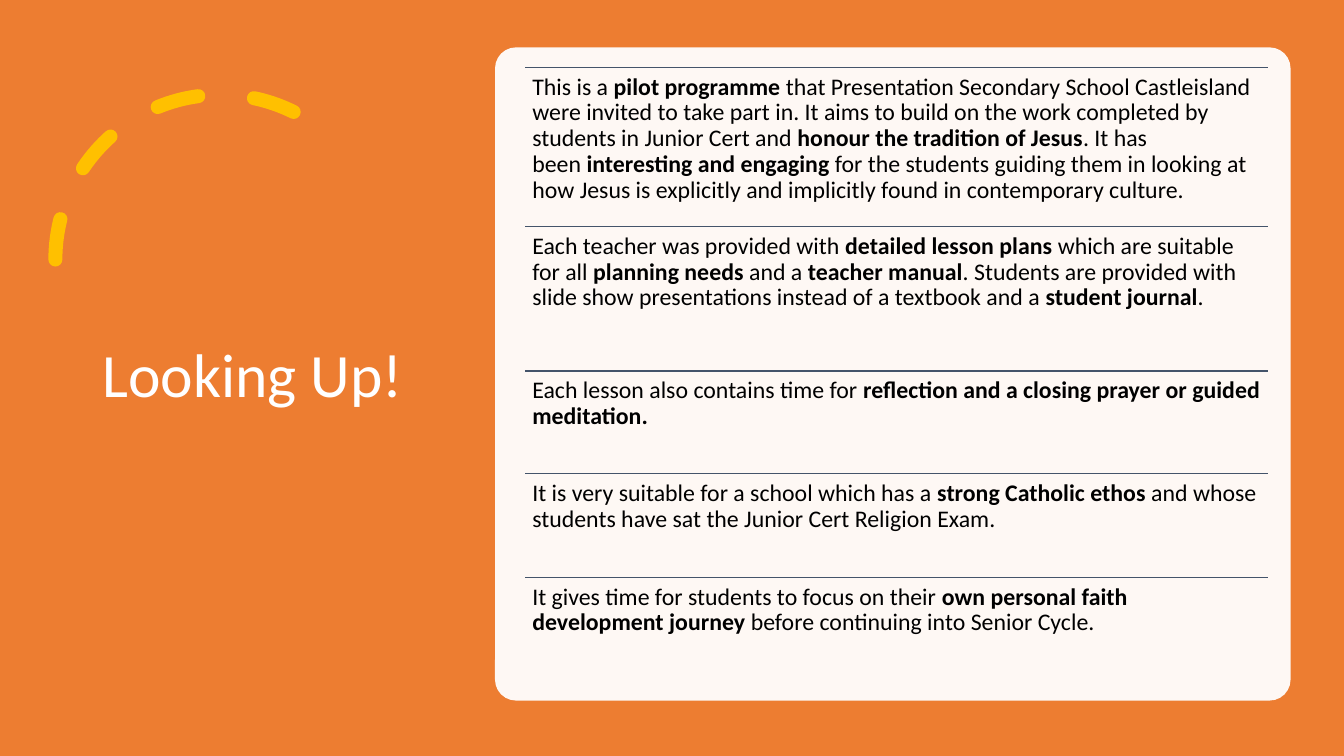
from itertools import accumulate

from lxml import etree
from pptx import Presentation
from pptx import util as u
from pptx.dml.color import RGBColor
from pptx.enum import dml, shapes, text
from pptx.oxml.ns import qn

COLORS = {"orange": "ED7D31", "gold": "FFC000", "white": "FFFFFF",
          "slate": "44546A", "black": "000000"}
FONT = "Calibri"
SLIDE_W, SLIDE_H = 13.33, 7.5
NO_BREAK_SPACE = chr(160)

POINTS = [
    (1.58, "This is a **pilot programme **that Presentation Secondary School Castleisland "
           "were invited to take part in. It aims to build on the work completed by students "
           "in Junior Cert and **honour the tradition of Jesus**. It has been~"
           "**interesting and engaging **for the students guiding them in~looking at how "
           "Jesus is explicitly and implicitly found in contemporary culture."),
    (1.43, "Each teacher was provided with **detailed lesson plans **which are~suitable "
           "for all **planning needs **and a **teacher manual**. Students are provided with "
           "slide show presentations instead of a textbook and a **student journal**."),
    (1.02, "Each lesson also contains time for **reflection and a closing prayer or "
           "guided meditation.**"),
    (1.03, "It is very suitable for a school which has a **strong Catholic ethos **and "
           "whose students have sat the Junior Cert Religion Exam."),
    (1.02, "It gives time for students to focus on their** own personal faith development "
           "journey **before continuing into Senior Cycle."),
]


def rgb(name):
    """Return the named colour."""
    return RGBColor.from_string(COLORS[name])


def add_text(parent, box, content, size, color, anchor=text.MSO_ANCHOR.TOP,
             inset=(0.1, 0.05), after=0):
    """Add a text box; double asterisks toggle bold, a tilde is a no-break space."""
    tf = parent.add_textbox(*map(u.Inches, box)).text_frame
    tf.word_wrap = True
    tf.vertical_anchor = anchor
    tf.margin_left = tf.margin_right = u.Inches(inset[0])
    tf.margin_top = tf.margin_bottom = u.Inches(inset[1])
    p = tf.paragraphs[0]
    p.line_spacing = 0.9
    p.space_after = u.Pt(after)
    for i, part in enumerate(content.replace("~", NO_BREAK_SPACE).split("**")):
        if part:
            r = p.add_run()
            r.text = part
            r.font.name = FONT
            r.font.size = u.Pt(size)
            r.font.bold = i % 2 == 1
            r.font.color.rgb = rgb(color)


def add_panel(s, kind, box, color):
    """Add a borderless filled shape."""
    sp = s.shapes.add_shape(kind, *map(u.Inches, box))
    sp.shadow.inherit = False
    sp.fill.solid()
    sp.fill.fore_color.rgb = rgb(color)
    sp.line.fill.background()
    return sp


def add_rule(parent, x, y, width):
    """Add a thin horizontal line."""
    line = parent.add_connector(shapes.MSO_CONNECTOR.STRAIGHT,
                                *map(u.Inches, (x, y, x + width, y)))
    line.line.color.rgb = rgb("slate")
    line.line.width = u.Pt(1)
    etree.SubElement(line._element.spPr, qn("a:effectLst"))


def add_dashed_arc(s, box):
    """Add the dashed arc, mirrored to open to the lower right."""
    sp = s.shapes.add_shape(shapes.MSO_SHAPE.ARC, *map(u.Inches, box))
    sp.shadow.inherit = False
    sp.adjustments[0] = 146.129
    sp.adjustments[1] = 0
    sp.fill.background()
    sp.line.color.rgb = rgb("gold")
    sp.line.width = u.Pt(10)
    sp.line.dash_style = dml.MSO_LINE.DASH
    sp.line._get_or_add_ln().set("cap", "rnd")
    sp._element.spPr.find(qn("a:xfrm")).set("flipH", "1")


def add_title_side(s, x, y):
    """Draw the arc and the title."""
    add_dashed_arc(s, (x + 0.55, y + 0.94, 3.27, 3.27))
    add_text(s.shapes, (x + 0.92, y + 0.7, 3.23, 6.09), "Looking Up!", 44, "white",
             anchor=text.MSO_ANCHOR.MIDDLE)


def add_points_card(s, x, y, width, height):
    """Draw the rounded card with its ruled list of points."""
    card = add_panel(s, shapes.MSO_SHAPE.ROUNDED_RECTANGLE, (x, y, width, height), "white")
    card.adjustments[0] = 0.032
    fill_color = card._element.spPr.find(qn("a:solidFill"))[0]
    etree.SubElement(fill_color, qn("a:alpha")).set("val", "95000")
    rows = s.shapes.add_group_shape().shapes
    left, row_w = x + 0.3, 7.37
    tops = accumulate((h for h, _ in POINTS), initial=y + 0.2)
    for top, (row_h, content) in zip(tops, POINTS):
        add_rule(rows, left, top, row_w)
        add_text(rows, (left, top, row_w, row_h), content, 17, "black",
                 inset=(0.07, 0.07), after=6)


def main():
    """Build and save the slide."""
    prs = Presentation()
    prs.slide_width, prs.slide_height = u.Inches(SLIDE_W), u.Inches(SLIDE_H)
    s = prs.slides.add_slide(prs.slide_layouts[6])
    add_panel(s, shapes.MSO_SHAPE.RECTANGLE, (0, 0, SLIDE_W, SLIDE_H), "orange")
    add_title_side(s, 0, 0)
    add_points_card(s, 4.91, 0.47, 7.89, 6.48)
    prs.save("out.pptx")


if __name__ == "__main__":
    main()
